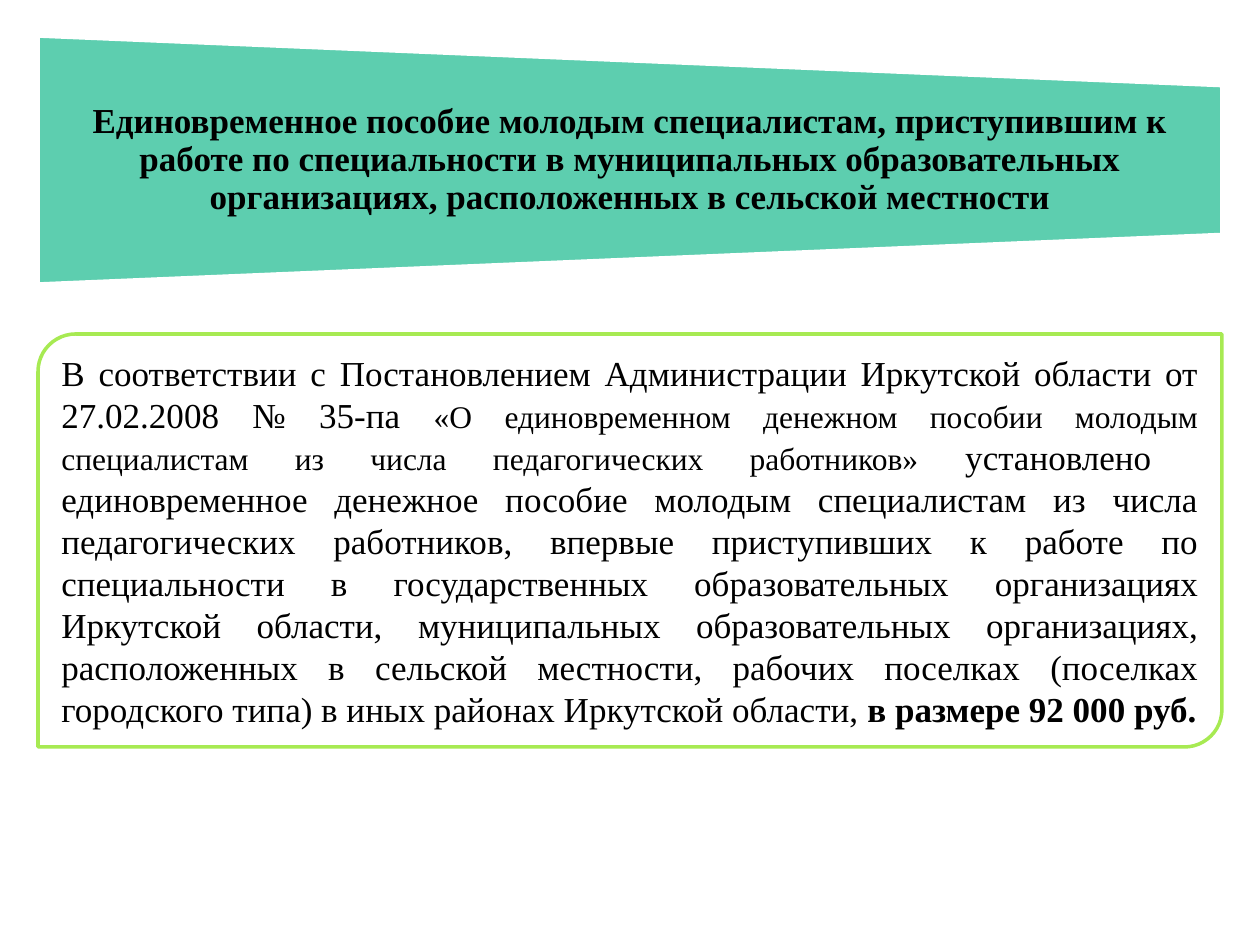
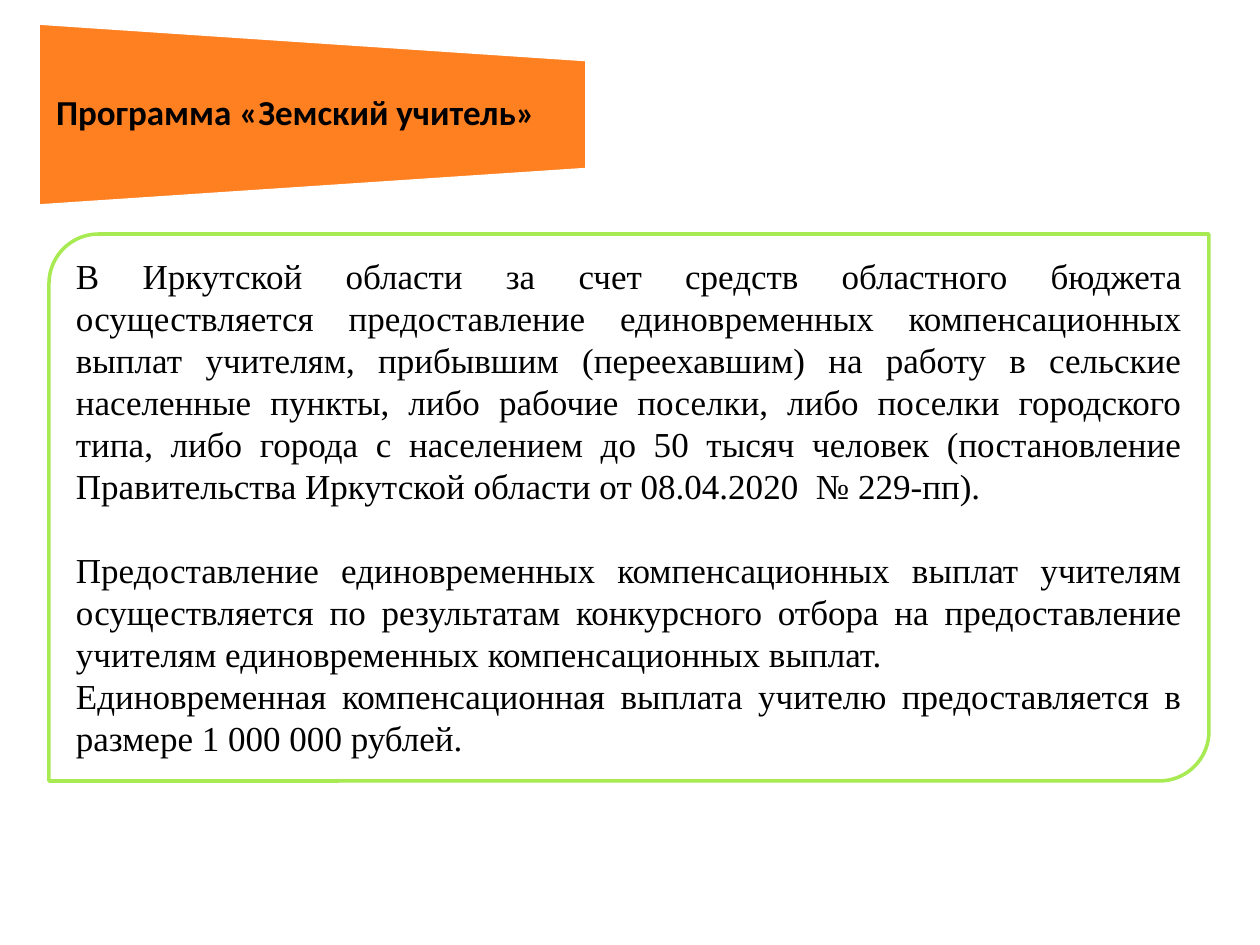
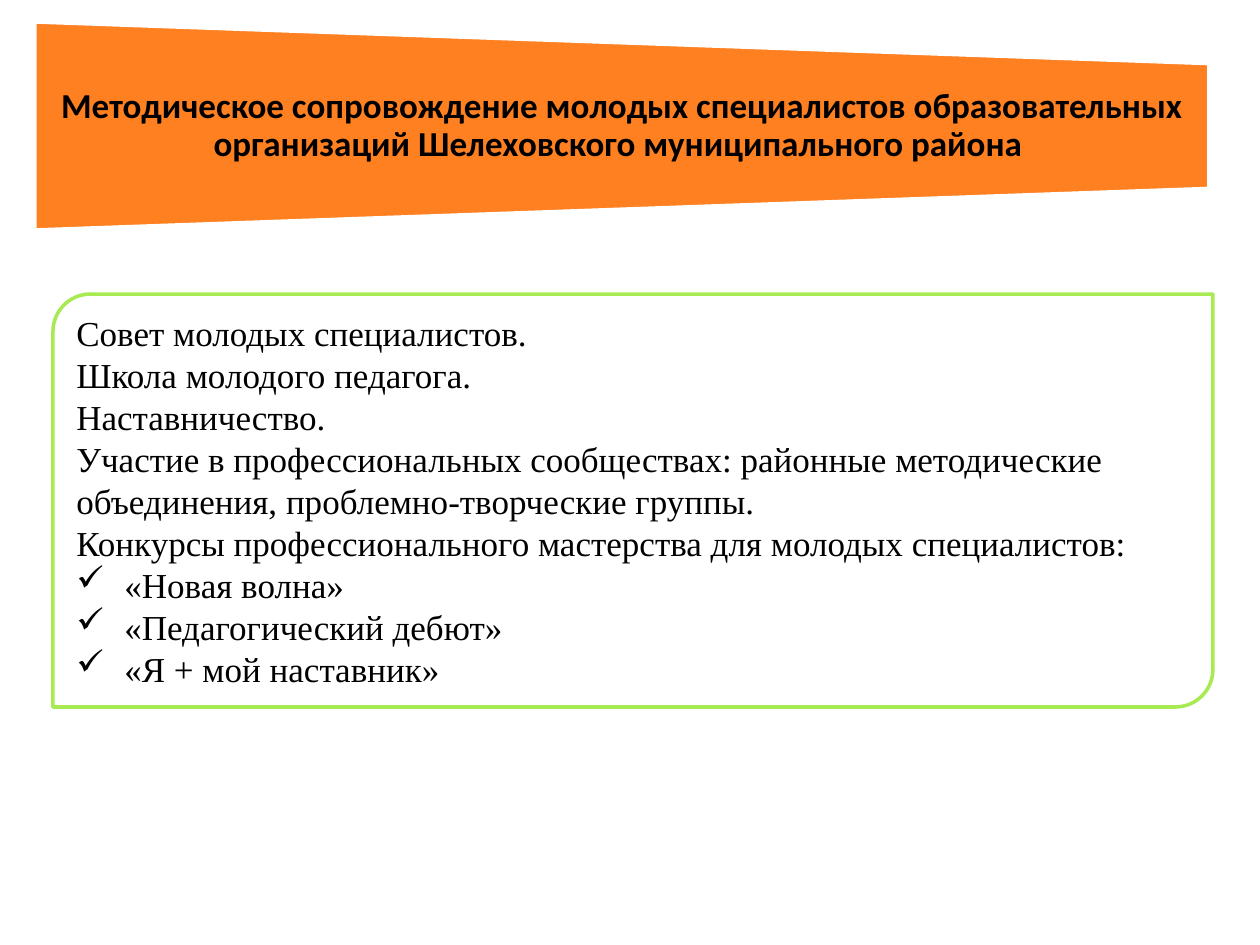
from dataclasses import dataclass

from lxml.etree import SubElement
from pptx import Presentation
from pptx.dml.color import RGBColor
from pptx.enum.shapes import MSO_SHAPE as Preset
from pptx.enum.text import MSO_ANCHOR as Anchor, MSO_AUTO_SIZE as AutoSize, PP_ALIGN as Align
from pptx.oxml.ns import qn
from pptx.util import Emu, Pt

PX = 914400 // 126


@dataclass(frozen=True)
class Theme:
    green: RGBColor = RGBColor(0x5D, 0xCE, 0xAF)
    orange: RGBColor = RGBColor(0xFF, 0x80, 0x21)
    lime: RGBColor = RGBColor(0xA7, 0xEA, 0x52)
    white: RGBColor = RGBColor(0xFF, 0xFF, 0xFF)
    black: RGBColor = RGBColor(0, 0, 0)
    serif: str = "Times New Roman"
    sans: str = "Calibri"
    text_size: int = 20
    quote_size: int = 18
    outline: int = 2
    section_gap: int = 24


THEME = Theme()
TITLE_INSET = 18
BULLET_INDENT = 48
CARD_CORNER = 0.091

# Card paragraphs are (kind, runs); each run is (text, style).
SLIDES = [
    dict(
        title="Единовременное пособие молодым специалистам, приступившим к работе по "
              "специальности в муниципальных образовательных организациях, "
              "расположенных в сельской местности",
        title_font=THEME.serif, title_align=Align.CENTER,
        band_color=THEME.green, band=(38, 36, 1184, 248),
        card=(38, 334, 1184, 413), card_align=Align.JUSTIFY,
        paragraphs=[
            ("plain", [
                ("В соответствии с Постановлением Администрации Иркутской области "
                 "от 27.02.2008 № 35-па ", "normal"),
                ("«О единовременном денежном пособии молодым специалистам из числа "
                 "педагогических работников» ", "quote"),
                ("установлено  единовременное денежное пособие молодым специалистам из "
                 "числа педагогических работников, впервые приступивших к работе по "
                 "специальности в государственных образовательных организациях Иркутской "
                 "области, муниципальных образовательных организациях, расположенных в "
                 "сельской местности, рабочих поселках (поселках городского типа) в иных "
                 "районах Иркутской области, ", "normal"),
                ("в размере 92 000 руб.", "strong"),
            ]),
        ],
    ),
    dict(
        title="Программа «Земский учитель»",
        title_font=THEME.sans, title_align=Align.LEFT,
        band_color=THEME.orange, band=(38, 23, 549, 183),
        card=(49, 234, 1160, 547), card_align=Align.JUSTIFY,
        paragraphs=[
            ("plain", [
                ("В Иркутской области за счет средств областного бюджета осуществляется "
                 "предоставление единовременных компенсационных выплат учителям, прибывшим "
                 "(переехавшим) на работу в сельские населенные пункты, либо рабочие "
                 "поселки, либо поселки городского типа, либо города с населением до 50 "
                 "тысяч человек (постановление Правительства Иркутской области от "
                 "08.04.2020  № 229-пп). ", "normal")]),
            ("section", [
                ("Предоставление единовременных компенсационных выплат учителям "
                 "осуществляется по результатам конкурсного отбора на предоставление "
                 "учителям единовременных компенсационных выплат. ", "normal")]),
            ("plain", [
                ("Единовременная компенсационная выплата учителю предоставляется в размере "
                 "1 000 000 рублей.", "normal")]),
        ],
    ),
    dict(
        title="Методическое сопровождение молодых специалистов образовательных "
              "организаций Шелеховского муниципального района ",
        title_font=THEME.sans, title_align=Align.CENTER,
        band_color=THEME.orange, band=(35, 22, 1174, 208),
        card=(53, 294, 1160, 413), card_align=Align.LEFT,
        paragraphs=[
            ("plain", [("Совет молодых специалистов.", "normal")]),
            ("plain", [("Школа молодого педагога.", "normal")]),
            ("plain", [("Наставничество.", "normal")]),
            ("plain", [("Участие в профессиональных сообществах: районные методические "
                        "объединения, проблемно-творческие группы.", "normal")]),
            ("plain", [("Конкурсы профессионального мастерства для молодых "
                        "специалистов:", "normal")]),
            ("bullet", [("«Новая волна»", "normal")]),
            ("bullet", [("«Педагогический дебют»", "normal")]),
            ("bullet", [("«Я + мой наставник»", "normal")]),
        ],
    ),
]


def px(*lengths):
    return [Emu(round(length * PX)) for length in lengths]


def add_outlined(slide, preset, box, fill, line):
    shape = slide.shapes.add_shape(preset, *px(*box))
    shape.shadow.inherit = False
    shape.fill.solid()
    shape.fill.fore_color.rgb = fill
    shape.line.color.rgb = line
    shape.line.width = Pt(THEME.outline)
    return shape


def style_font(font, name, size=THEME.text_size, bold=False):
    font.name, font.size, font.bold = name, Pt(size), bold
    font.color.rgb = THEME.black


def add_band(slide, box, color):
    """Draw the tapering band: a preset as tall as the band is wide, turned on its side."""
    left, top, width, height = box
    shift = (width - height) / 2
    band = add_outlined(slide, Preset.FLOWCHART_MANUAL_OPERATION,
                        (left + shift, top - shift, height, width), color, THEME.white)
    band.rotation = 270
    return band


def place_title(slide, band, content):
    """Put the title over the middle three fifths of the band."""
    left, top, width, height = content["band"]
    title = slide.shapes.title
    title.left, title.top, title.width, title.height = px(
        left, top + height / 5, width, height * 3 / 5)
    band.element.addnext(title.element)
    frame = title.text_frame
    frame.text = content["title"]
    frame.word_wrap = True
    frame.auto_size = AutoSize.NONE
    frame.vertical_anchor = Anchor.MIDDLE
    frame.margin_left, frame.margin_right = px(TITLE_INSET, TITLE_INSET)
    frame.margin_top = frame.margin_bottom = 0
    heading = frame.paragraphs[0]
    heading.alignment = content["title_align"]
    heading.line_spacing = 0.9
    style_font(heading.font, content["title_font"], bold=True)


def add_check_bullet(paragraph):
    properties = paragraph._p.get_or_add_pPr()
    indent, = px(BULLET_INDENT)
    properties.set("marL", str(indent))
    properties.set("indent", str(-indent))
    SubElement(properties, qn("a:buChar")).set("char", "✓")


def add_card(slide, content):
    card = add_outlined(slide, Preset.ROUND_2_DIAG_RECTANGLE, content["card"],
                        THEME.white, THEME.lime)
    card.adjustments[0] = CARD_CORNER
    frame = card.text_frame
    frame.word_wrap = True
    frame.auto_size = AutoSize.SHAPE_TO_FIT_TEXT
    frame.vertical_anchor = Anchor.TOP
    for index, (kind, runs) in enumerate(content["paragraphs"]):
        paragraph = frame.add_paragraph() if index else frame.paragraphs[0]
        paragraph.alignment = content["card_align"]
        if kind == "section":
            paragraph.space_before = Pt(THEME.section_gap)
        elif kind == "bullet":
            add_check_bullet(paragraph)
        style_font(paragraph.font, THEME.serif)
        for text, style in runs:
            run = paragraph.add_run()
            run.text = text
            if style == "quote":
                run.font.size = Pt(THEME.quote_size)
            elif style == "strong":
                run.font.bold = True


def main():
    deck = Presentation()
    deck.slide_width, deck.slide_height = px(1260, 945)
    title_only = deck.slide_layouts[5]
    for content in SLIDES:
        slide = deck.slides.add_slide(title_only)
        band = add_band(slide, content["band"], content["band_color"])
        place_title(slide, band, content)
        add_card(slide, content)
    deck.save("out.pptx")


if __name__ == "__main__":
    main()
